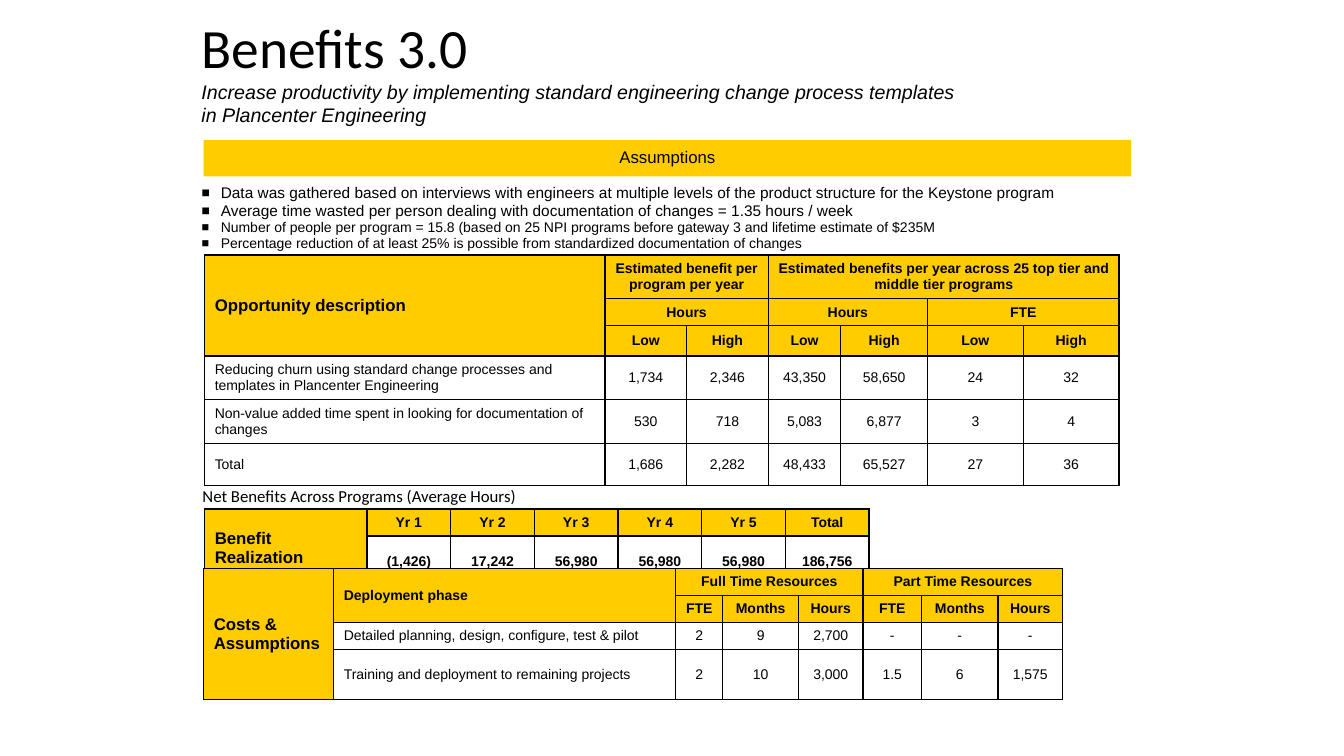
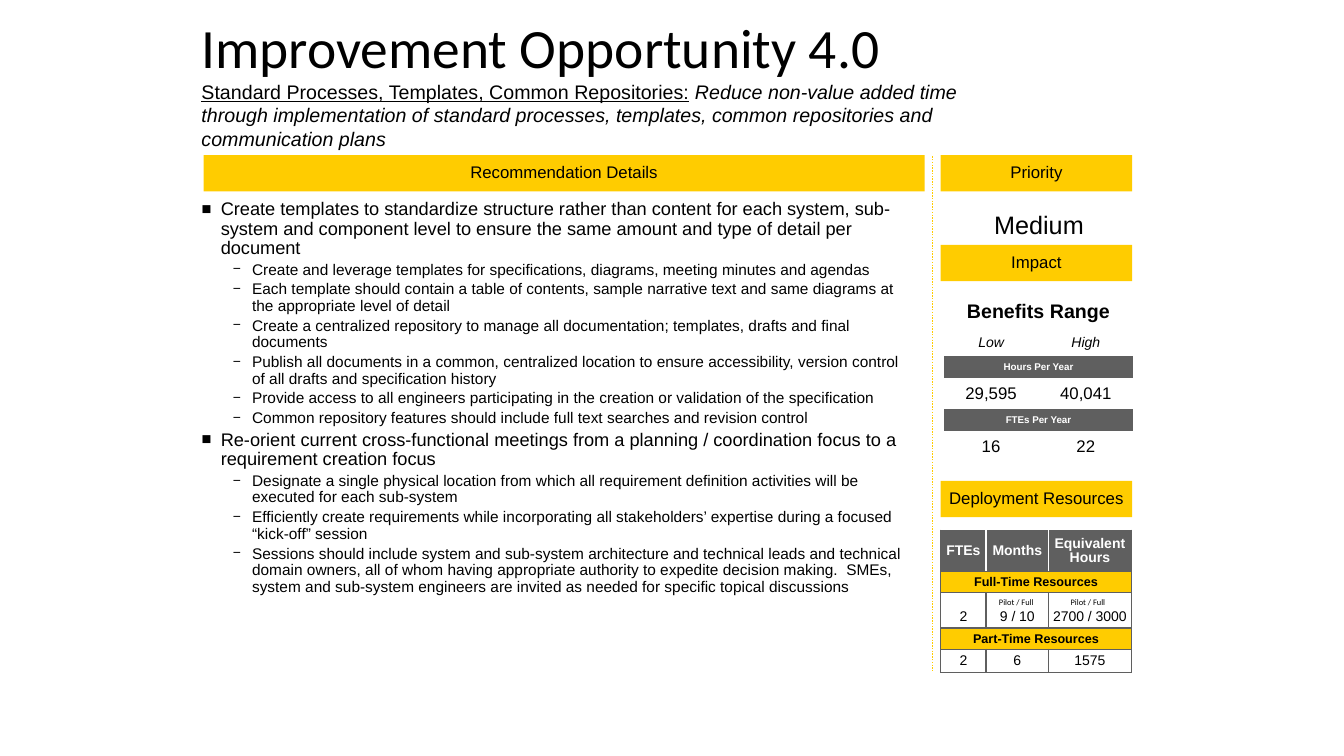
from lxml.etree import SubElement
from pptx import Presentation
from pptx.dml.color import RGBColor
from pptx.enum.dml import MSO_LINE
from pptx.enum.shapes import MSO_CONNECTOR, MSO_SHAPE
from pptx.enum.text import MSO_ANCHOR, MSO_AUTO_SIZE, PP_ALIGN
from pptx.oxml.ns import qn
from pptx.util import Pt

PX = 9144
GOLD, GRAY, INK, WHITE = "FFCC00", "5F5F5F", "000000", "FFFFFF"
PLAIN = "{2D5ABB26-0587-4C30-8999-92F81FD0307C}"
LEFT, MID = PP_ALIGN.LEFT, PP_ALIGN.CENTER
hue = RGBColor.from_string

# size, bold, italic, text colour, fill
LOOK = {
    "head": (10, True, False, INK, GOLD),
    "bold": (10, True, False, INK, None),
    "row": (10, False, False, INK, None),
    "dark": (10, True, False, WHITE, GRAY),
    "band": (9, True, False, INK, GOLD),
    "name": (14, True, False, INK, None),
    "hint": (10, False, True, INK, None),
    "strip": (7, True, False, WHITE, GRAY),
    "value": (12, False, False, INK, None),
}


def style(frame, size, bold=False, italic=False, tint=INK, face="Arial", align=LEFT, lead=None):
    for para in frame.paragraphs:
        para.alignment = align
        if lead:
            para.line_spacing = lead
        for run in para.runs:
            font = run.font
            font.size, font.name = Pt(size), face
            font.bold, font.italic = bold, italic
            font.color.rgb = hue(tint)


def grid(slide, left, top, cols, rows, edge=None, pad=None):
    wide, high = sum(cols), sum(row[0] for row in rows)
    box = slide.shapes.add_table(len(rows), len(cols), left * PX, top * PX, wide * PX, high * PX)
    table = box.table
    table.first_row = table.horz_banding = False
    table._tbl.tblPr.find(qn("a:tableStyleId")).text = PLAIN
    for col, width in zip(table.columns, cols):
        col.width = width * PX
    for r, (height, look, texts) in enumerate(rows):
        table.rows[r].height = height * PX
        size, bold, italic, tint, fill = LOOK[look]
        for c, text in enumerate(texts):
            cell = table.cell(r, c)
            cell.vertical_anchor = MSO_ANCHOR.MIDDLE
            if pad:
                cell.margin_left = cell.margin_right = pad * PX
                cell.margin_top = cell.margin_bottom = pad * PX
            if edge:
                props = cell._tc.get_or_add_tcPr()
                for side in "LRTB":
                    line = SubElement(props, qn("a:ln" + side), w="12700")
                    SubElement(SubElement(line, qn("a:solidFill")), qn("a:srgbClr"), val=edge)
            if fill:
                cell.fill.solid()
                cell.fill.fore_color.rgb = hue(fill)
            else:
                cell.fill.background()
            if text not in ("<", "^"):
                cell.text_frame.text = text
                style(cell.text_frame, size, bold, italic, tint, align=MID)
    for r, (height, look, texts) in enumerate(rows):
        for c, text in enumerate(texts):
            if text in ("<", "^"):
                continue
            right, low = c, r
            while right + 1 < len(cols) and texts[right + 1] == "<":
                right += 1
            while low + 1 < len(rows) and rows[low + 1][2][c] == "^":
                low += 1
            if (right, low) != (c, r):
                table.cell(r, c).merge(table.cell(low, right))
    return table


deck = Presentation()
deck.slide_width, deck.slide_height = 1333 * PX, 750 * PX

facts = [
    (0, 11, "Data was gathered based on interviews with engineers at multiple levels of the product structure for the Keystone program"),
    (0, 11, "Average time wasted per person dealing with documentation of changes = 1.35 hours / week"),
    (0, 10, "Number of people per program = 15.8 (based on 25 NPI programs before gateway 3 and lifetime estimate of $235M"),
    (0, 10, "Percentage reduction of at least 25% is possible from standardized documentation of changes"),
]
steps = [
    (0, 13, "Create templates to standardize structure rather than content for each system, sub-system and component level to ensure the same amount and type of detail per document"),
    (1, 11, "Create and leverage templates for specifications, diagrams, meeting minutes and agendas"),
    (1, 11, "Each template should contain a table of contents, sample narrative text and same diagrams at the appropriate level of detail"),
    (1, 11, "Create a centralized repository to manage all documentation; templates, drafts and final documents"),
    (1, 11, "Publish all documents in a common, centralized location to ensure accessibility, version control of all drafts and specification history"),
    (1, 11, "Provide access to all engineers participating in the creation or validation of the specification"),
    (1, 11, "Common repository features should include full text searches and revision control"),
    (0, 13, "Re-orient current cross-functional meetings from a planning / coordination focus to a requirement creation focus"),
    (1, 11, "Designate a single physical location from which all requirement definition activities will be executed for each sub-system"),
    (1, 11, "Efficiently create requirements while incorporating all stakeholders’ expertise during a focused “kick-off” session"),
    (1, 11, "Sessions should include system and sub-system architecture and technical leads and technical domain owners, all of whom having appropriate authority to expedite decision making.  SMEs, system and sub-system engineers are invited as needed for specific topical discussions"),
]
pages = [
    ("Benefits 3.0", "",
     "Increase productivity by implementing standard engineering change process templates in Plancenter Engineering",
     782, (178, 178, 889, 64), facts, 0.95, 0),
    ("Improvement Opportunity 4.0", "Standard Processes, Templates, Common Repositories:",
     " Reduce non-value added time through implementation of standard processes, templates, common repositories and communication plans",
     774, (178, 193, 736, 382), steps, 0.9, 0.2),
]
for name, lead, goal, width, area, items, pitch, gap in pages:
    slide = deck.slides.add_slide(deck.slide_layouts[1])
    title, body = slide.placeholders
    title.left, title.top, title.width, title.height = 190 * PX, 17 * PX, 932 * PX, 67 * PX
    frame = title.text_frame
    frame.text = name
    frame.auto_size = MSO_AUTO_SIZE.NONE
    frame.vertical_anchor = MSO_ANCHOR.MIDDLE
    style(frame, 39.6, face="Calibri", lead=0.9)

    body.left, body.top, body.width, body.height = [n * PX for n in area]
    frame = body.text_frame
    frame.auto_size = MSO_AUTO_SIZE.NONE
    frame.text = "\n".join(item[2] for item in items)
    style(frame, 11, lead=pitch)
    for para, (level, size, text) in zip(frame.paragraphs, items):
        para.level = level
        para.space_before = Pt(size * gap)
        para.runs[0].font.size = Pt(size)
        props = para._p.get_or_add_pPr()
        props.set("marL", str((31, 62)[level] * PX))
        props.set("indent", str(-19 * PX))
        SubElement(props, qn("a:buSzPct"), val="90000")
        SubElement(props, qn("a:buFont"), typeface="Arial")
        SubElement(props, qn("a:buChar"), char="■−"[level])

    frame = slide.shapes.add_textbox(190 * PX, 74 * PX, width * PX, 57 * PX).text_frame
    frame.word_wrap = True
    para = frame.paragraphs[0]
    para.text = lead or goal
    if lead:
        para.add_run().text = goal
    style(frame, 14, italic=True)
    if lead:
        para.runs[0].font.italic = False
        para.runs[0].font.underline = True

one, two = deck.slides

bars = [
    (one, 202, 139, 920, "Assumptions"),
    (two, 202, 154, 715, "Recommendation Details"),
    (two, 933, 154, 190, "Priority"),
    (two, 933, 243, 190, "Impact"),
    (two, 933, 477, 190, "Deployment Resources"),
]
for slide, left, top, width, text in bars:
    bar = slide.shapes.add_shape(MSO_SHAPE.RECTANGLE, left * PX, top * PX, width * PX, 36 * PX)
    bar.shadow.inherit = False
    bar.fill.solid()
    bar.fill.fore_color.rgb = hue(GOLD)
    bar.line.fill.background()
    frame = bar.text_frame
    frame.margin_left = frame.margin_right = 0
    frame.vertical_anchor = MSO_ANCHOR.MIDDLE
    frame.text = text
    style(frame, 12, align=MID, lead=0.9)

gains = grid(one, 203, 505, [161] + [83] * 6, [
    (26, "head", ["Benefit Realization", "Yr 1", "Yr 2", "Yr 3", "Yr 4", "Yr 5", "Total"]),
    (48, "bold", ["^", "(1,426)", "17,242", "56,980", "56,980", "56,980", "186,756"]),
], INK)
costs = grid(one, 202, 564, [129, 339, 47, 75, 64, 58, 76, 64], [
    (26, "head", ["Costs & Assumptions", "Deployment phase", "Full Time Resources", "<", "<", "Part Time Resources", "<", "<"]),
    (25, "head", ["^", "^", "FTE", "Months", "Hours", "FTE", "Months", "Hours"]),
    (26, "row", ["^", "Detailed planning, design, configure, test & pilot", "2", "9", "2,700", "-", "-", "-"]),
    (48, "row", ["^", "Training and deployment to remaining projects", "2", "10", "3,000", "1.5", "6", "1,575"]),
], INK)
chances = grid(one, 203, 253, [397, 81, 81, 72, 86, 95, 95], [
    (42, "head", ["Opportunity description", "Estimated benefit per program per year", "<",
                  "Estimated benefits per year across 25 top tier and middle tier programs", "<", "<", "<"]),
    (25, "head", ["^", "Hours", "<", "Hours", "<", "FTE", "<"]),
    (28, "head", ["^", "Low", "High", "Low", "High", "Low", "High"]),
    (42, "row", ["Reducing churn using standard change processes and templates in Plancenter Engineering",
                 "1,734", "2,346", "43,350", "58,650", "24", "32"]),
    (42, "row", ["Non-value added time spent in looking for documentation of changes",
                 "530", "718", "5,083", "6,877", "3", "4"]),
    (42, "row", ["Total", "1,686", "2,282", "48,433", "65,527", "27", "36"]),
], INK)
for table in (gains, costs, chances):
    style(table.cell(0, 0).text_frame, 12, bold=True)
for table, col, first in ((costs, 1, 0), (chances, 0, 3)):
    for r in range(first, len(table.rows)):
        for para in table.cell(r, col).text_frame.paragraphs:
            para.alignment = LEFT

staff = grid(two, 933, 526, [45, 62, 82], [
    (41, "dark", ["FTEs", "Months", "Equivalent Hours"]),
    (21, "band", ["Full-Time Resources", "<", "<"]),
    (35, "row", ["2", "9 / 10", "2700 / 3000"]),
    (21, "band", ["Part-Time Resources", "<", "<"]),
    (21, "row", ["2", "6", "1575"]),
], GRAY, 3)
for c, sides in enumerate(("R", "LR", "L")):
    for side in sides:
        line = staff.cell(0, c)._tc.tcPr.find(qn("a:ln" + side))
        line.find(".//" + qn("a:srgbClr")).set("val", WHITE)
staff.cell(0, 2).text_frame.paragraphs[0].line_spacing = 0.9
for c in range(3):
    staff.cell(2, c).vertical_anchor = MSO_ANCHOR.BOTTOM

grid(two, 936, 293, [94, 94], [
    (32, "name", ["Benefits Range", "<"]),
    (27, "hint", ["Low", "High"]),
    (21, "strip", ["Hours Per Year", "<"]),
    (31, "value", ["29,595", "40,041"]),
    (21, "strip", ["FTEs Per Year", "<"]),
    (31, "value", ["16", "22"]),
])

notes = [
    (one, 191, 477, 335, 30, "Net Benefits Across Programs (Average Hours)", 12, "Calibri", LEFT),
    (two, 981, 587, 64, 20, "Pilot / Full", 6, "Calibri", LEFT),
    (two, 1052, 587, 64, 20, "Pilot / Full", 6, "Calibri", LEFT),
    (two, 934, 203, 193, 36, "Medium", 18, "Arial", MID),
]
for slide, left, top, width, height, text, size, face, align in notes:
    frame = slide.shapes.add_textbox(left * PX, top * PX, width * PX, height * PX).text_frame
    frame.word_wrap = True
    frame.text = text
    style(frame, size, face=face, align=align)

rule = two.shapes.add_connector(MSO_CONNECTOR.STRAIGHT, 925 * PX, 155 * PX, 925 * PX, 666 * PX)
rule.line.color.rgb = hue(GOLD)
rule.line.width = Pt(1)
rule.line.dash_style = MSO_LINE.ROUND_DOT
SubElement(rule._element.spPr, qn("a:effectLst"))

deck.save("out.pptx")
